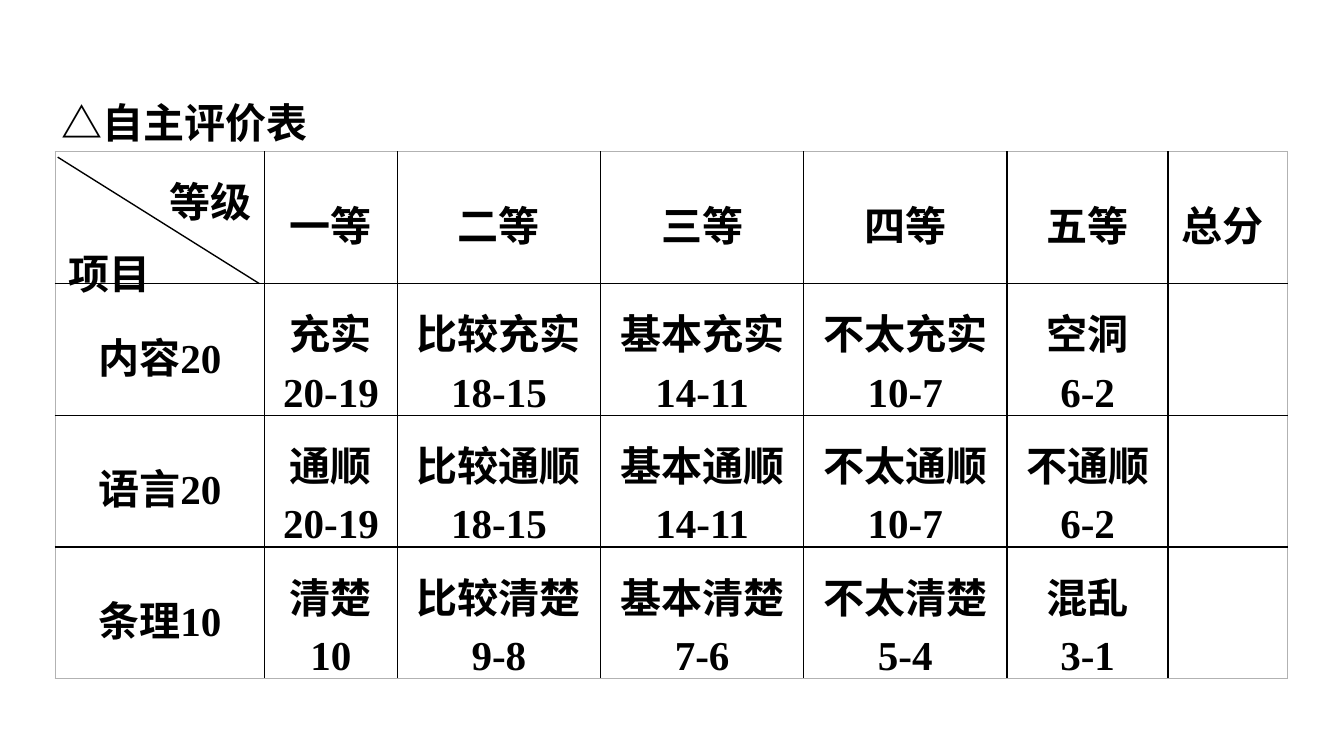
from lxml.etree import SubElement
from pptx import Presentation
from pptx.dml.color import RGBColor
from pptx.enum.shapes import MSO_CONNECTOR
from pptx.enum.text import MSO_ANCHOR, MSO_AUTO_SIZE, PP_ALIGN
from pptx.oxml.ns import qn
from pptx.util import Cm, Pt

BLACK = RGBColor(0x00, 0x00, 0x00)
GREY = RGBColor(0xB2, 0xB2, 0xB2)
CHINESE_FONT = "Noto Sans CJK SC"
LATIN_FONT = "Times New Roman"

COLUMN_WIDTHS = [3.96, 2.51, 3.84, 3.84, 3.84, 3.05, 2.26]
ROW_HEIGHT = 2.49
GRADES = ["一等", "二等", "三等", "四等", "五等"]
CRITERIA = [
    ("内容20", ["充实", "比较充实", "基本充实", "不太充实", "空洞"],
     ["20-19", "18-15", "14-11", "10-7", "6-2"]),
    ("语言20", ["通顺", "比较通顺", "基本通顺", "不太通顺", "不通顺"],
     ["20-19", "18-15", "14-11", "10-7", "6-2"]),
    ("条理10", ["清楚", "比较清楚", "基本清楚", "不太清楚", "混乱"],
     ["10", "9-8", "7-6", "5-4", "3-1"]),
]


def write_paragraph(para, text, font=LATIN_FONT, align=PP_ALIGN.CENTER, spacing=1.2, hanging=0):
    para.alignment = align
    para.line_spacing = spacing
    if hanging:
        properties = para._p.get_or_add_pPr()
        properties.set("marL", str(Cm(hanging)))
        properties.set("indent", str(-Cm(hanging)))
    span = para.add_run()
    span.text = text
    span.font.name = font
    span.font.size = Pt(22)
    span.font.bold = True
    span.font.color.rgb = BLACK
    SubElement(span._r.get_or_add_rPr(), qn("a:ea"), typeface=CHINESE_FONT)


def write_cell(cell, lines, aligns=(PP_ALIGN.CENTER,), anchor=MSO_ANCHOR.MIDDLE, hanging=0):
    cell.vertical_anchor = anchor
    frame = cell.text_frame
    for index, text in enumerate(lines):
        para = frame.add_paragraph() if index else frame.paragraphs[0]
        write_paragraph(para, text, align=aligns[index % len(aligns)], hanging=hanging)


def draw_border(cell, side, color, width):
    properties = cell._tc.get_or_add_tcPr()
    line = SubElement(properties, qn(f"a:{side}"), w=str(Pt(width)))
    fill = SubElement(line, qn("a:solidFill"))
    SubElement(fill, qn("a:srgbClr"), val=str(color))


def format_grid(table):
    last_row = len(table.rows) - 1
    last_column = len(table.columns) - 1
    for row_index, row in enumerate(table.rows):
        row.height = Cm(ROW_HEIGHT)
        for column_index, cell in enumerate(row.cells):
            outer_sides = {
                "lnL": column_index == 0,
                "lnR": column_index == last_column,
                "lnT": row_index == 0,
                "lnB": row_index == last_row,
            }
            for side, outer in outer_sides.items():
                draw_border(cell, side, GREY if outer else BLACK, 0.5 if outer else 1)
            cell.fill.background()


def add_title(page, text):
    box = page.shapes.title
    box.left, box.top, box.width, box.height = Cm(0.91), Cm(1.35), Cm(21), Cm(1.45)
    frame = box.text_frame
    frame.word_wrap = True
    frame.auto_size = MSO_AUTO_SIZE.SHAPE_TO_FIT_TEXT
    frame.vertical_anchor = MSO_ANCHOR.MIDDLE
    write_paragraph(frame.paragraphs[0], text, font=CHINESE_FONT,
                    align=PP_ALIGN.LEFT, spacing=1.5)


def add_score_table(page):
    row_count = len(CRITERIA) + 1
    table = page.shapes.add_table(
        row_count, len(COLUMN_WIDTHS), Cm(1.04), Cm(2.87),
        Cm(sum(COLUMN_WIDTHS)), Cm(ROW_HEIGHT * row_count)).table
    table.first_row = False
    table.horz_banding = False
    for column, width in zip(table.columns, COLUMN_WIDTHS):
        column.width = Cm(width)
    format_grid(table)
    write_cell(table.cell(0, 0), ["等级", "项目"], aligns=(PP_ALIGN.RIGHT, PP_ALIGN.LEFT))
    for column, grade in enumerate(GRADES, 1):
        write_cell(table.cell(0, column), [grade])
    write_cell(table.cell(0, len(GRADES) + 1), ["总分"], aligns=(PP_ALIGN.LEFT,))
    for row, (criterion, ratings, scores) in enumerate(CRITERIA, 1):
        write_cell(table.cell(row, 0), [criterion])
        for column, lines in enumerate(zip(ratings, scores), 1):
            write_cell(table.cell(row, column), lines, anchor=MSO_ANCHOR.TOP, hanging=1)


def add_header_diagonal(page):
    diagonal = page.shapes.add_connector(
        MSO_CONNECTOR.STRAIGHT, Cm(1.09), Cm(2.97), Cm(4.9), Cm(5.36))
    diagonal.line.color.rgb = BLACK
    diagonal.line.width = Pt(0.75)
    SubElement(diagonal._element.spPr, qn("a:effectLst"))


def main():
    deck = Presentation()
    deck.slide_width = Cm(25.4)
    deck.slide_height = Cm(14.29)
    page = deck.slides.add_slide(deck.slide_layouts[5])
    add_title(page, "△自主评价表")
    add_score_table(page)
    add_header_diagonal(page)
    deck.save("out.pptx")


if __name__ == "__main__":
    main()
